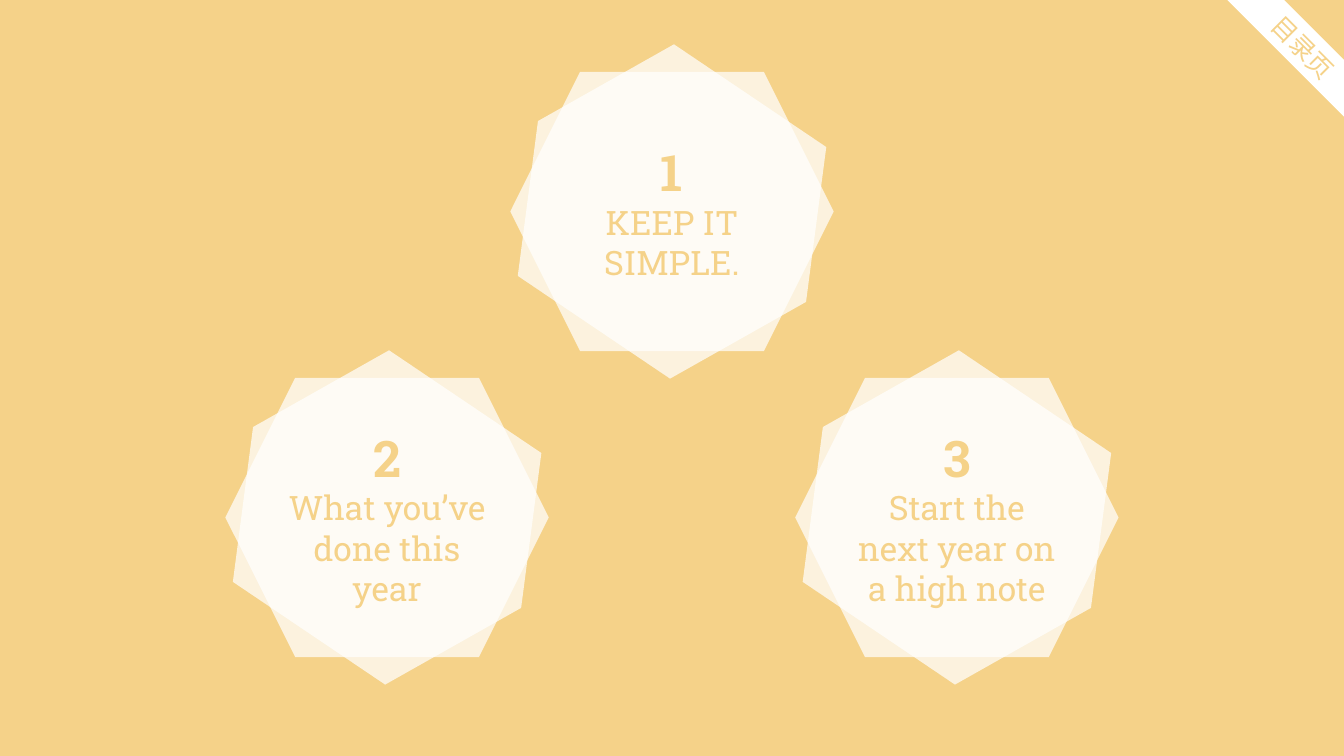
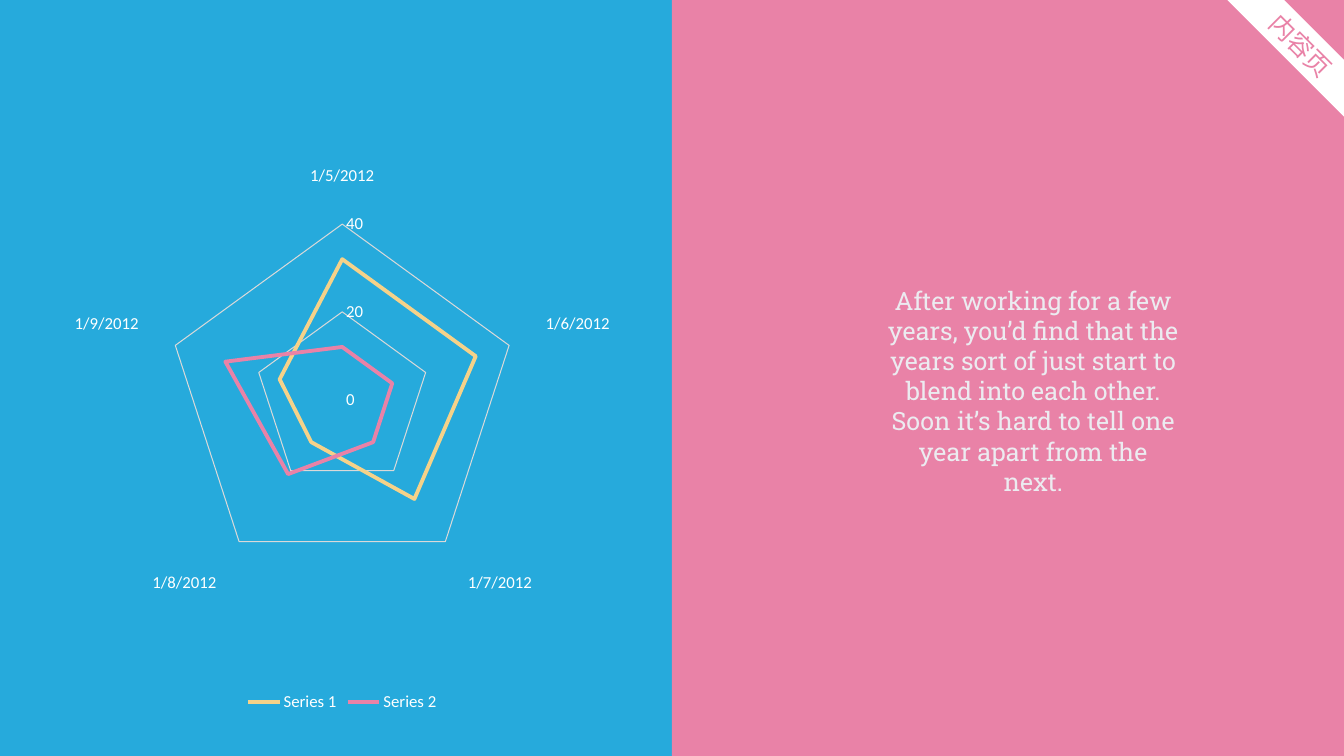
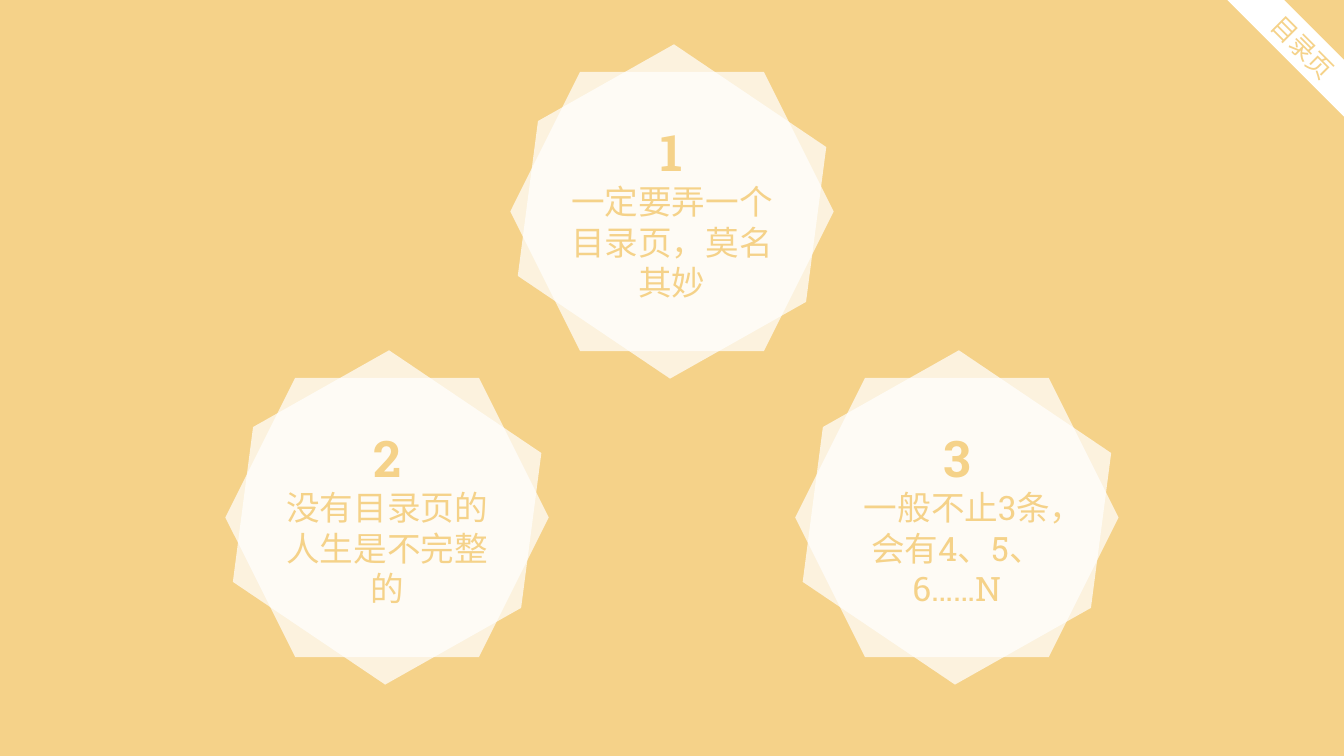
from dataclasses import dataclass

from lxml.etree import SubElement
from pptx import Presentation
from pptx.chart.data import CategoryChartData
from pptx.dml.color import RGBColor
from pptx.enum.chart import XL_CHART_TYPE, XL_LEGEND_POSITION, XL_TICK_MARK
from pptx.enum.shapes import MSO_SHAPE
from pptx.enum.text import MSO_ANCHOR, MSO_AUTO_SIZE, PP_ALIGN
from pptx.oxml.ns import qn
from pptx.util import Cm, Pt


# Shared look
@dataclass(frozen=True)
class Theme:
    sand: str = "F5D289"
    blue: str = "26AADC"
    pink: str = "E982A7"
    white: str = "FFFFFF"
    pale: str = "ECEBF0"
    grid: str = "D9D9D9"
    latin_font: str = "Roboto Slab"
    caption_font: str = "Noto Sans CJK JP"
    ribbon_font: str = "Noto Sans CJK SC"
    chart_font: str = "Calibri"
    number_size: int = 36
    caption_size: int = 24
    text_size: int = 18
    chart_size: int = 12
    badge_opacity: int = 72


@dataclass(frozen=True)
class Box:
    """A rectangle in centimetres."""
    left: float
    top: float
    width: float
    height: float

    def lengths(self) -> tuple:
        return Cm(self.left), Cm(self.top), Cm(self.width), Cm(self.height)


@dataclass(frozen=True)
class Badge:
    """A numbered double hexagon; the caption is split where its font changes."""
    number: str
    caption: tuple[str, ...]


@dataclass(frozen=True)
class ChartSeries:
    name: str
    values: tuple[int, ...]
    color: str


THEME = Theme()
SLIDE_WIDTH, SLIDE_HEIGHT = 33.87, 19.05
RIBBON = Box(29.55, 0.69, 6.58, 1.01)
PARAGRAPH = Box(22.11, 7.05, 7.86, 4.88)
CHART = Box(1.6, 1.96, 14.05, 16.08)

# Badges stand in a triangle: (steps from the centre line, top)
BADGE_WIDTH, BADGE_HEIGHT, BADGE_STEP = 8.15, 7.04, 7.18
BADGE_PLACES = ((0, 1.81), (-1, 9.52), (1, 9.52))
BADGE_TILT = 34

ENGLISH_BADGES = (
    Badge("1", ("KEEP IT SIMPLE.",)),
    Badge("2", ("What you’ve done this year",)),
    Badge("3", ("Start the next year on a high note",)),
)
CHINESE_BADGES = (
    Badge("1", ("一定要弄一个目录页，莫名其妙",)),
    Badge("2", ("没有目录页的人生是不完整的",)),
    Badge("3", ("一般不止", "3", "条，会有", "4、5、6……N")),
)
DATES = tuple(f"1/{day}/2012" for day in range(5, 10))
SERIES = (
    ChartSeries("Series 1", (32, 32, 28, 12, 15), THEME.sand),
    ChartSeries("Series 2", (12, 12, 12, 21, 28), THEME.pink),
)
STORY = ("After working for a few years, you’d find that the years sort of "
         "just start to blend into each other. Soon it’s hard to tell one "
         "year apart from the next.")


# Helpers
def rgb(color: str) -> RGBColor:
    return RGBColor.from_string(color)


def paint(fill, color: str) -> None:
    fill.solid()
    fill.fore_color.rgb = rgb(color)


def place(shape, box: Box) -> None:
    shape.left, shape.top, shape.width, shape.height = box.lengths()


def add_plain_shape(shapes, kind, box: Box, color: str):
    shape = shapes.add_shape(kind, *box.lengths())
    shape.shadow.inherit = False
    paint(shape.fill, color)
    shape.line.fill.background()
    return shape


def set_font(run, font_name: str, size: int, color: str,
             east_asian: str, bold: bool = False) -> None:
    run.font.name = font_name
    run.font.size = Pt(size)
    run.font.bold = bold
    run.font.color.rgb = rgb(color)
    latin = run.font._element.find(qn("a:latin"))
    asian = latin.makeelement(qn("a:ea"), {"typeface": east_asian})
    latin.addnext(asian)


def caption_font(text: str) -> str:
    has_ideograph = any("一" <= letter <= "龥" for letter in text)
    return THEME.caption_font if has_ideograph else THEME.latin_font


def bring_to_front(slide, shape) -> None:
    slide.shapes._spTree.append(shape._element)


# Slide parts
def add_ribbon(slide, label: str, color: str) -> None:
    title = slide.shapes.title
    place(title, RIBBON)
    title.rotation = 45
    paint(title.fill, THEME.white)
    frame = title.text_frame
    frame.text = label
    frame.auto_size = MSO_AUTO_SIZE.NONE
    frame.vertical_anchor = MSO_ANCHOR.MIDDLE
    paragraph = frame.paragraphs[0]
    paragraph.alignment = PP_ALIGN.CENTER
    set_font(paragraph.runs[0], THEME.ribbon_font, THEME.text_size, color,
             THEME.ribbon_font)
    bring_to_front(slide, title)


def add_hexagon(shapes, box: Box):
    hexagon = add_plain_shape(shapes, MSO_SHAPE.HEXAGON, box, THEME.white)
    color = hexagon._element.spPr.find(".//" + qn("a:srgbClr"))
    SubElement(color, qn("a:alpha"), val=str(THEME.badge_opacity * 1000))
    return hexagon


def add_badge(slide, badge: Badge, column: int, top: float) -> None:
    left = (SLIDE_WIDTH - BADGE_WIDTH) / 2 + column * BADGE_STEP
    box = Box(left, top, BADGE_WIDTH, BADGE_HEIGHT)
    group = slide.shapes.add_group_shape()
    add_hexagon(group.shapes, box).rotation = BADGE_TILT
    frame = add_hexagon(group.shapes, box).text_frame
    frame.word_wrap = True
    frame.vertical_anchor = MSO_ANCHOR.MIDDLE
    frame.text = badge.number
    number = frame.paragraphs[0]
    set_font(number.runs[0], THEME.latin_font, THEME.number_size, THEME.sand,
             THEME.caption_font, bold=True)
    caption = frame.add_paragraph()
    for text in badge.caption:
        run = caption.add_run()
        run.text = text
        set_font(run, caption_font(text), THEME.caption_size, THEME.sand,
                 THEME.caption_font)
    for paragraph in frame.paragraphs:
        paragraph.alignment = PP_ALIGN.CENTER


def add_story(slide, text: str) -> None:
    body = slide.placeholders[1]
    place(body, PARAGRAPH)
    frame = body.text_frame
    frame.text = text
    frame.auto_size = MSO_AUTO_SIZE.NONE
    paragraph = frame.paragraphs[0]
    paragraph.alignment = PP_ALIGN.CENTER
    paragraph.space_before = Pt(0)
    properties = paragraph._p.get_or_add_pPr()
    properties.set("marL", "0")
    properties.set("indent", "0")
    SubElement(properties, qn("a:buNone"))
    set_font(paragraph.runs[0], THEME.latin_font, THEME.text_size, THEME.pale,
             THEME.caption_font)
    bring_to_front(slide, body)


def add_radar_chart(slide) -> None:
    data = CategoryChartData()
    data.categories = DATES
    for entry in SERIES:
        data.add_series(entry.name, entry.values)
    chart = slide.shapes.add_chart(
        XL_CHART_TYPE.RADAR, *CHART.lengths(), data).chart
    chart.has_title = False
    chart.font.name = THEME.chart_font
    chart.font.size = Pt(THEME.chart_size)
    chart.font.color.rgb = rgb(THEME.white)
    chart.has_legend = True
    chart.legend.position = XL_LEGEND_POSITION.BOTTOM
    chart.legend.include_in_layout = False
    chart.plots[0].vary_by_categories = False

    # Axes
    value_axis, category_axis = chart.value_axis, chart.category_axis
    for axis in (value_axis, category_axis):
        axis.major_tick_mark = XL_TICK_MARK.NONE
        axis.minor_tick_mark = XL_TICK_MARK.NONE
    value_axis.minimum_scale, value_axis.maximum_scale = 0, 40
    value_axis.major_unit = 20
    value_axis.format.line.fill.background()
    value_axis.has_major_gridlines = True
    category_axis.has_major_gridlines = False
    for line, width in ((value_axis.major_gridlines.format.line, 0.75),
                        (category_axis.format.line, 1)):
        line.color.rgb = rgb(THEME.grid)
        line.width = Pt(width)

    # Series lines
    for series, entry in zip(chart.plots[0].series, SERIES):
        series.format.line.color.rgb = rgb(entry.color)
        series.format.line.width = Pt(2.75)


# Slides
def add_contents_slide(presentation, badges: tuple[Badge, ...]) -> None:
    slide = presentation.slides.add_slide(presentation.slide_layouts[5])
    paint(slide.background.fill, THEME.sand)
    for badge, (column, top) in zip(badges, BADGE_PLACES):
        add_badge(slide, badge, column, top)
    add_ribbon(slide, "目录页", THEME.sand)


def add_chart_slide(presentation) -> None:
    slide = presentation.slides.add_slide(presentation.slide_layouts[1])
    half = SLIDE_WIDTH / 2
    for column, color in enumerate((THEME.blue, THEME.pink)):
        panel = Box(column * half, 0, half, SLIDE_HEIGHT)
        add_plain_shape(slide.shapes, MSO_SHAPE.RECTANGLE, panel, color)
    add_story(slide, STORY)
    add_radar_chart(slide)
    add_ribbon(slide, "内容页 ", THEME.pink)


def main() -> None:
    presentation = Presentation()
    presentation.slide_width = Cm(SLIDE_WIDTH)
    presentation.slide_height = Cm(SLIDE_HEIGHT)
    add_contents_slide(presentation, ENGLISH_BADGES)
    add_chart_slide(presentation)
    add_contents_slide(presentation, CHINESE_BADGES)
    presentation.save("out.pptx")


if __name__ == "__main__":
    main()
